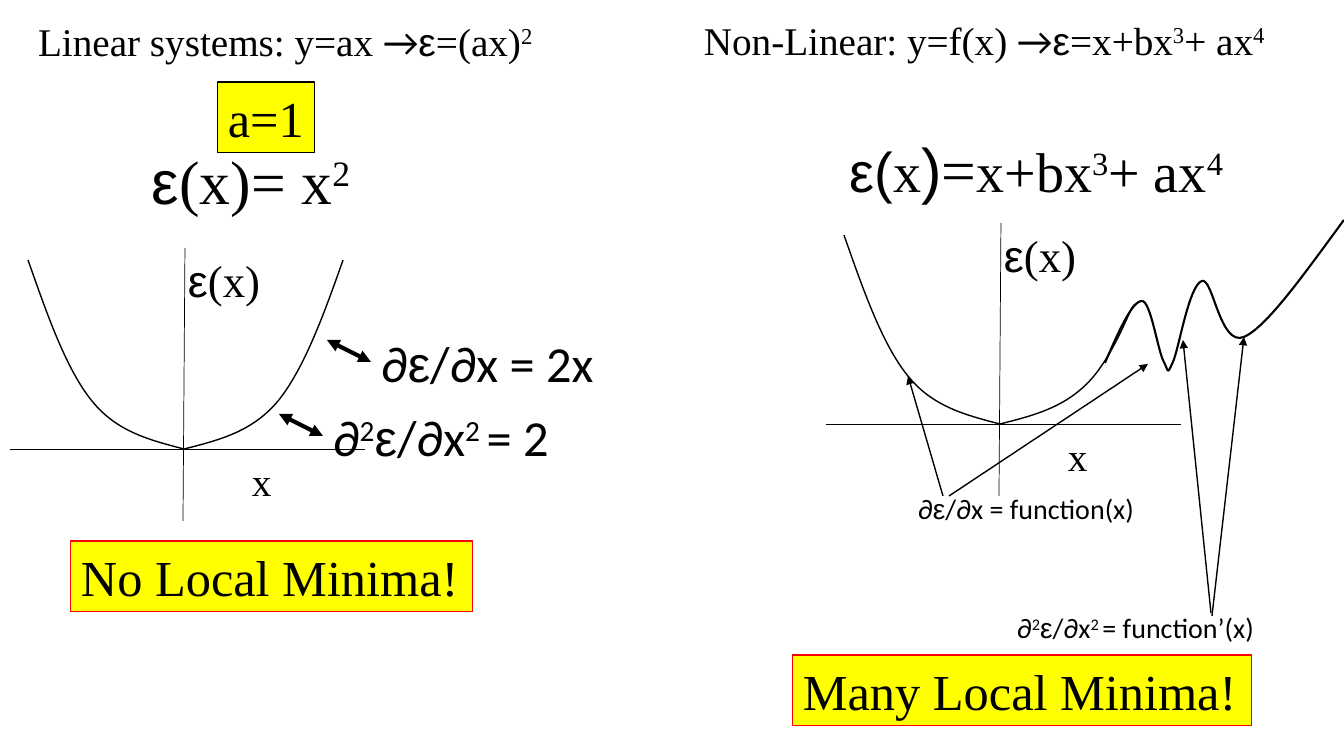
from dataclasses import dataclass
from lxml.etree import SubElement
from pptx import Presentation
from pptx.dml.color import RGBColor
from pptx.enum.shapes import MSO_CONNECTOR as CONNECTOR, MSO_SHAPE as SHAPE
from pptx.enum.text import MSO_ANCHOR as ANCHOR, MSO_AUTO_SIZE as AUTO_SIZE, PP_ALIGN as ALIGN
from pptx.oxml.ns import qn
from pptx.util import Pt

PX = 914400 / 100.8


@dataclass(frozen=True)
class Theme:
    ink: str = "000000"
    paper: str = "FFFFFF"
    highlight: str = "FFFF00"
    alert: str = "FF0000"
    note: int = 20
    heading: int = 28
    axis_label: int = 32
    large: int = 36
    equation: int = 40
    big_equation: int = 44
    hairline: float = 0.5
    border: float = 0.75
    thin: float = 1
    medium: float = 1.5
    thick: float = 3


theme = Theme()
SERIF, SANS, MATH = "Times New Roman", "Arial", "Calibri"

# ^ switches superscript on and off
LINEAR_HEADING = [(SERIF, "Linear systems: y=ax "), (MATH, "→"), (SANS, "ε"), (SERIF, "=(ax)^2")]
NONLINEAR_HEADING = [(SERIF, "Non-Linear: y=f(x) "), (MATH, "→"), (SANS, "ε"),
                     (SERIF, "=x+bx^3^+ ax^4")]
LINEAR_EQUATION = [(SANS, "ε"), (SERIF, "(x)= x^2")]
NONLINEAR_EQUATION = [(SANS, "ε("), (SERIF, "x"), (SANS, ")", theme.big_equation),
                      (SERIF, "=", theme.big_equation), (SERIF, "x+bx^3^+ ax^4")]
Y_LABEL = [(SANS, "ε"), (SERIF, "(x)")]
X_LABEL = [(SERIF, "x")]


def first_derivative(value):
    return [(MATH, "∂"), (SANS, "ε"), (MATH, "/∂x = " + value)]


def second_derivative(value):
    return [(MATH, "∂^2"), (SANS, "ε"), (MATH, "/∂x^2 ^= " + value)]


TEXTS = [
    (NONLINEAR_HEADING, (694, 11, 594, 57), theme.heading),
    (LINEAR_EQUATION, (142, 138, 223, 85), theme.big_equation),
    (NONLINEAR_EQUATION, (840, 126, 402, 85), theme.equation),
    (first_derivative("2x"), (371, 327, 235, 72), theme.large),
    (second_derivative("2"), (323, 401, 247, 72), theme.large),
    (first_derivative("function(x)"), (908, 487, 239, 44), theme.note),
    (second_derivative("function’(x)"), (1007, 606, 262, 44), theme.note),
]
BOXES = [
    ("a=1", (218, 82, 97, 71), theme.ink),
    ("No Local Minima!", (71, 541, 402, 71), theme.alert),
    ("Many Local Minima!", (793, 655, 459, 71), theme.alert),
]
DOUBLE_ARROWS = [((327, 340), (371, 362)), ((279, 414), (323, 436))]
POINTERS = [((908, 376), (943, 496)), ((1148, 364), (949, 496)),
            ((1183, 340), (1211, 613)), ((1244, 337), (1212, 616))]

PLOT_ORIGINS = [(184, 449), (1000, 424)]
AXES = [((1, -201), (-1, 72)), ((-174, 0), (181, 0))]
BRANCH = [(159, -189), (140, -135), (120, -80), (94, -48), (68, -17), (35, -9), (0, 0)]
BRANCH_SIDES = [1, -0.98]
RIPPLE = [(1105, 363), (1118, 333), (1132, 301), (1142, 301), (1151, 301), (1158, 352),
          (1164, 362), (1169, 372), (1167, 375), (1173, 362), (1179, 349), (1189, 285),
          (1202, 281), (1213, 277), (1220, 347), (1244, 337), (1267, 327), (1305, 273),
          (1344, 220)]
BRANCH_COVER = [(1147, 282), (1134, 303), (1122, 324), (1119, 306), (1116, 290), (1120, 200),
                (1129, 182), (1139, 166), (1169, 192), (1174, 209), (1180, 225), (1170, 254),
                (1160, 283)]


def emu(*lengths):
    return [round(length * PX) for length in lengths]


def rgb(colour):
    return RGBColor.from_string(colour)


def set_line(shape, colour, width):
    shape.line.color.rgb = rgb(colour)
    shape.line.width = Pt(width)


def write(shape, runs, size, colour=theme.ink):
    frame = shape.text_frame
    frame.word_wrap = False
    frame.auto_size = AUTO_SIZE.SHAPE_TO_FIT_TEXT
    frame.vertical_anchor = ANCHOR.TOP
    paragraph = frame.paragraphs[0]
    paragraph.alignment = ALIGN.LEFT
    for font, text, *own_size in runs:
        for position, part in enumerate(text.split("^")):
            if not part:
                continue
            run = paragraph.add_run()
            run.text = part
            run.font.name = font
            run.font.size = Pt(own_size[0] if own_size else size)
            run.font.color.rgb = rgb(colour)
            if position % 2:
                run.font._element.set("baseline", "30000")


def add_text(slide, runs, place, size):
    write(slide.shapes.add_textbox(*emu(*place)), runs, size)


def add_box(slide, text, place, border):
    box = slide.shapes.add_shape(SHAPE.RECTANGLE, *emu(*place))
    box.shadow.inherit = False
    box.fill.solid()
    box.fill.fore_color.rgb = rgb(theme.highlight)
    set_line(box, border, theme.border)
    write(box, [(SERIF, text)], theme.large)


def add_line(slide, start, end, width, arrows=()):
    line = slide.shapes.add_connector(CONNECTOR.STRAIGHT, *emu(*start, *end))
    set_line(line, theme.ink, width)
    for arrow in arrows:
        SubElement(line.line._get_or_add_ln(), qn("a:" + arrow), type="triangle")
    SubElement(line._element.spPr, qn("a:effectLst"))


def add_curve(slide, points, width, colour=theme.ink, fill=None):
    builder = slide.shapes.build_freeform(*points[0], scale=PX)
    builder.add_line_segments(points[1:], close=False)
    curve = builder.convert_to_shape()
    segments = list(curve._element.iter(qn("a:lnTo")))
    path = segments[0].getparent()
    for first in range(0, len(segments), 3):
        bezier = SubElement(path, qn("a:cubicBezTo"))
        for segment in segments[first:first + 3]:
            bezier.append(segment[0])
            path.remove(segment)
    curve.shadow.inherit = False
    set_line(curve, colour, width)
    if fill:
        curve.fill.solid()
        curve.fill.fore_color.rgb = rgb(fill)
    else:
        curve.fill.background()


def add_plot(slide, origin):
    left, base = origin

    def shift(points, side=1):
        return [(round(left + side * x), base + y) for x, y in points]

    for axis in AXES:
        add_line(slide, *shift(axis), theme.hairline)
    for side in BRANCH_SIDES:
        add_curve(slide, shift(BRANCH, side), theme.thin)
    add_text(slide, Y_LABEL, (left - 6, base - 201, 93, 65), theme.axis_label)
    add_text(slide, X_LABEL, (left + 58, base + 3, 40, 57), theme.heading)


def main():
    deck = Presentation()
    deck.slide_width, deck.slide_height = emu(1344, 756)
    slide = deck.slides.add_slide(deck.slide_layouts[5])
    heading = slide.shapes.title
    heading.left, heading.top, heading.width, heading.height = emu(28, 12, 524, 57)
    write(heading, LINEAR_HEADING, theme.heading)
    for origin in PLOT_ORIGINS:
        add_plot(slide, origin)
    add_curve(slide, RIPPLE, theme.medium)
    add_curve(slide, BRANCH_COVER, theme.thin, theme.paper, theme.paper)
    for text in TEXTS:
        add_text(slide, *text)
    for start, end in DOUBLE_ARROWS:
        add_line(slide, start, end, theme.thick, ("headEnd", "tailEnd"))
    for start, end in POINTERS:
        add_line(slide, start, end, theme.thin, ("headEnd",))
    for box in BOXES:
        add_box(slide, *box)
    deck.save("out.pptx")


if __name__ == "__main__":
    main()
